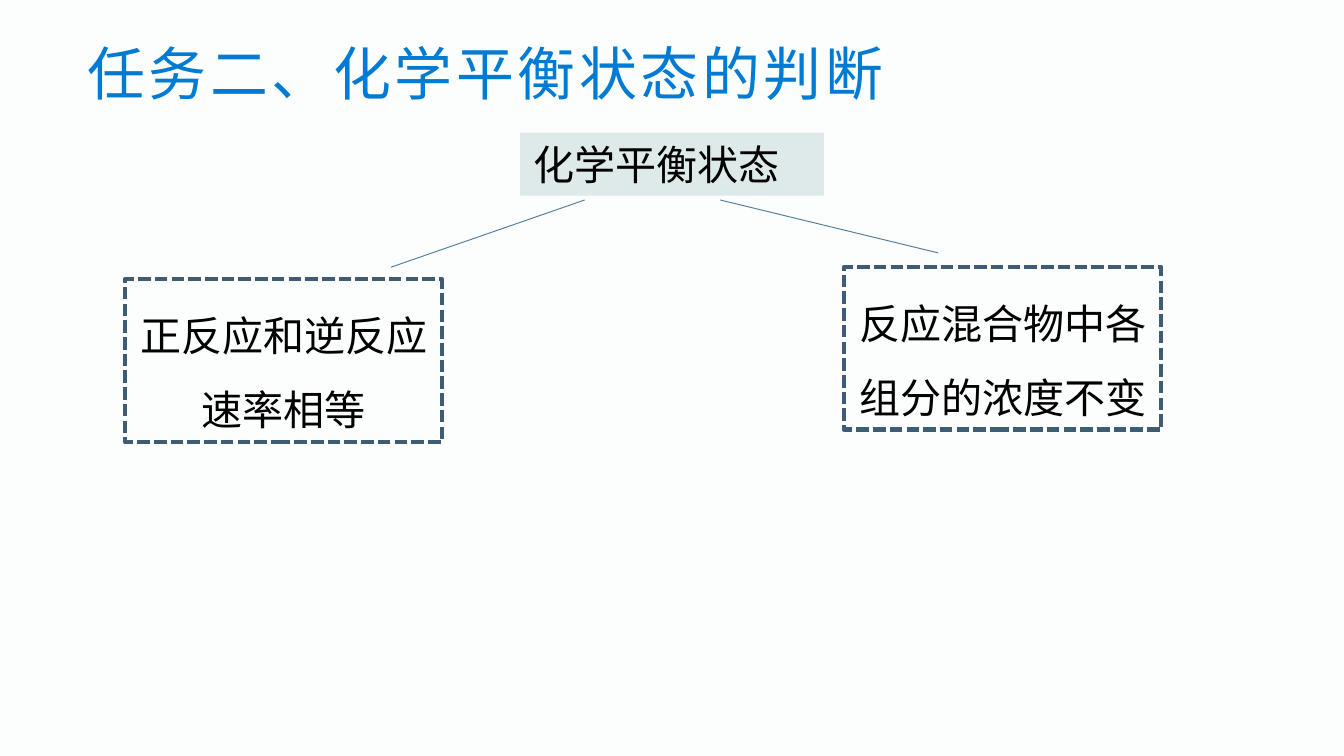
from lxml.etree import SubElement
from pptx import Presentation
from pptx.dml.color import RGBColor
from pptx.enum.dml import MSO_LINE_DASH_STYLE as Dash
from pptx.enum.shapes import MSO_CONNECTOR as Connector, MSO_SHAPE as Shape
from pptx.enum.text import MSO_ANCHOR as Anchor, PP_ALIGN as Align
from pptx.oxml.ns import qn
from pptx.util import Cm, Pt

# Content: places are left, top, width, height in cm
FONT = "Noto Sans CJK SC"
TITLE = ("任务二、化学平衡状态的判断", (1.4, 0.91, 22.6, 0.91))
CONCEPT = ("化学平衡状态", (9.83, 2.51, 5.74, 1.19))
CRITERIA_SIZE = (6, 3.07)
CRITERIA = [  # text, corner of the box, start and end of its branch
    ("正反应和逆反应速率相等", (2.36, 5.28), (11.05, 3.78), (7.39, 5.05)),
    ("反应混合物中各组分的浓度不变", (15.95, 5.05), (13.61, 3.78), (17.73, 4.78)),
]


def color(code):
    return RGBColor.from_string(code)


def cm(values):
    return [Cm(value) for value in values]


def write(box, text, size=22, fill="000000", align=Align.LEFT,
          anchor=Anchor.TOP, line_spacing=None, tracking=None):
    frame = box.text_frame
    frame.word_wrap = True
    frame.vertical_anchor = anchor
    para = frame.paragraphs[0]
    para.alignment = align
    para.line_spacing = line_spacing
    span = para.add_run()
    span.text = text
    span.font.size = Pt(size)
    span.font.name = FONT
    span.font.color.rgb = color(fill)
    properties = span.font._element
    SubElement(properties, qn("a:ea")).set("typeface", FONT)
    if tracking:
        properties.set("spc", str(tracking * 100))


def add_box(page, place, fill=None, border=None):
    box = page.shapes.add_shape(Shape.RECTANGLE, *cm(place))
    box.shadow.inherit = False
    if fill:
        box.fill.solid()
        box.fill.fore_color.rgb = color(fill)
    else:
        box.fill.background()
    if border:
        box.line.color.rgb = color(border)
        box.line.width = Pt(2.25)
        box.line.dash_style = Dash.SQUARE_DOT
    else:
        box.line.fill.background()
    return box


def add_branch(page, start, end):
    branch = page.shapes.add_connector(Connector.STRAIGHT, *cm(start + end))
    branch.line.color.rgb = color("547D9D")
    branch.line.width = Pt(0.5)
    SubElement(branch._element.spPr, qn("a:effectLst"))


def main():
    deck = Presentation()
    deck.slide_width, deck.slide_height = cm((25.4, 14.29))
    page = deck.slides.add_slide(deck.slide_layouts[6])
    page.background.fill.solid()
    page.background.fill.fore_color.rgb = color("FCFDFD")

    # Title
    text, place = TITLE
    write(page.shapes.add_textbox(*cm(place)), text, size=31, fill="007BD3",
          anchor=Anchor.MIDDLE, tracking=2)

    # Central concept
    text, place = CONCEPT
    write(add_box(page, place, fill="DEE9E9"), text)

    # Criteria and the branches leading to them
    for text, corner, start, end in CRITERIA:
        add_branch(page, start, end)
        box = add_box(page, corner + CRITERIA_SIZE, border="3E5C74")
        write(box, text, align=Align.CENTER, line_spacing=1.5)

    deck.save("out.pptx")


if __name__ == "__main__":
    main()
